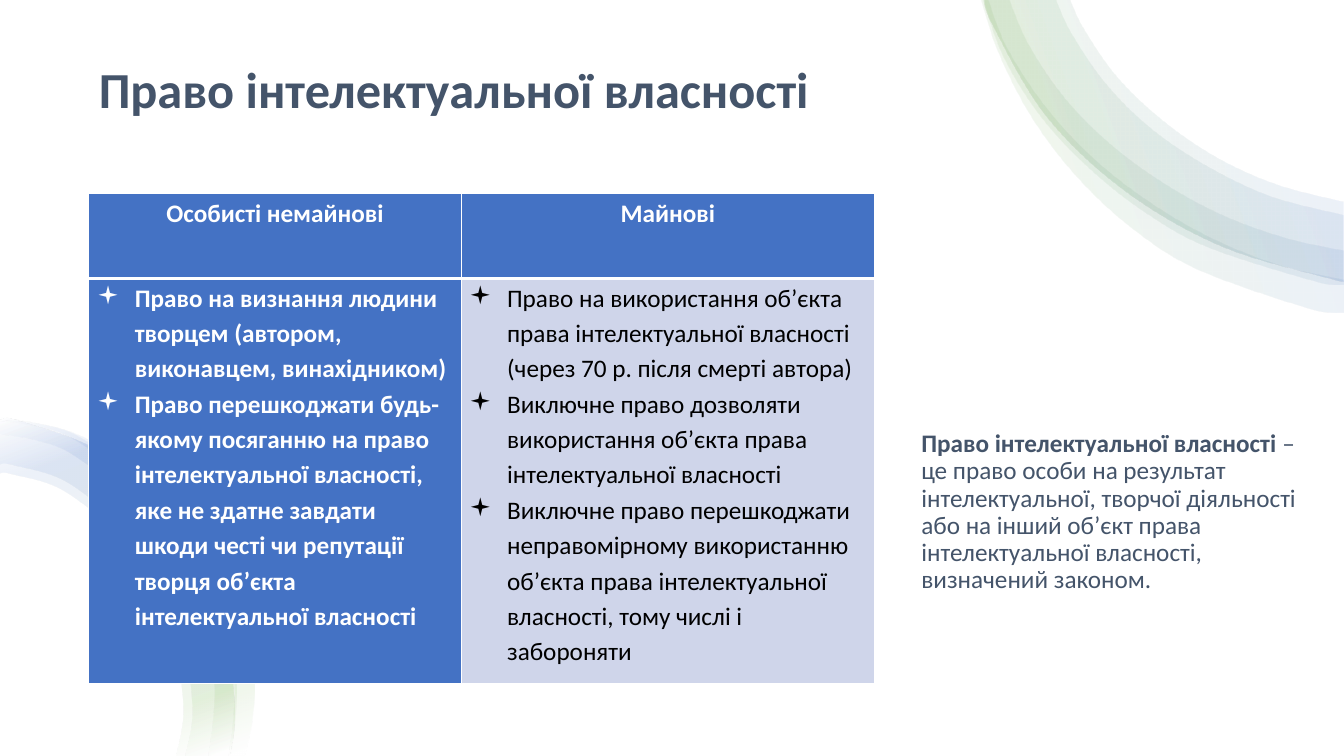
"""Build a slide on intellectual property rights with a table and curved ribbons."""
from dataclasses import dataclass

from lxml import etree
from pptx import Presentation
from pptx.dml.color import RGBColor
from pptx.enum.shapes import MSO_SHAPE
from pptx.enum.text import MSO_ANCHOR, PP_ALIGN
from pptx.oxml import parse_xml
from pptx.oxml.ns import nsdecls, qn
from pptx.util import Cm, Pt

RECT = MSO_SHAPE.RECTANGLE
TOP, MID = MSO_ANCHOR.TOP, MSO_ANCHOR.MIDDLE
LEFT, CENTER = PP_ALIGN.LEFT, PP_ALIGN.CENTER
INCH = 2.54


@dataclass(frozen=True)
class Theme:
    """Colours, fonts and type sizes of the slide."""
    font: str = "Calibri"
    signs: str = "Wingdings"
    head: int = 36
    body: int = 18
    ink: str = "44546A"
    blue: str = "4472C4"
    green: str = "70AD47"
    pale: str = "CFD5EA"
    white: str = "FFFFFF"
    black: str = "000000"


THEME = Theme()

LOW_RIM = [(0, 4.17), (.19, 4.18), (1.02, 4.5), (1.7, 5.15), (2.16, 6.02), (2.32, 6.99), (2.27, 7.5)]
TOP_RIM = [(9.77, 0), (9.85, .25), (10.38, 1.15), (11.16, 1.89), (12.12, 2.44), (13.2, 2.76), (13.33, 2.78)]

LOW_BANDS = [
    (LOW_RIM,
     [(0, 4.7), (.12, 4.71), (.64, 4.88), (1.24, 5.4), (1.66, 6.15), (1.81, 6.99), (1.74, 7.5)]),
    (LOW_RIM,
     [(0, 4.61), (.13, 4.62), (.68, 4.8), (1.3, 5.34), (1.74, 6.11), (1.9, 6.99), (1.83, 7.5)]),
    ([(0, 4.17), (.4, 4.21), (.83, 4.36), (1.56, 4.92), (2.07, 5.7), (2.32, 6.62), (2.33, 7.1), (2.28, 7.5)],
     [(0, 4.31), (.36, 4.37), (.75, 4.53), (1.41, 5.07), (1.86, 5.81), (2.1, 6.65), (2.11, 7.09), (2.06, 7.5)]),
    ([(0, 4.15), (.13, 4.16), (.81, 4.33), (1.61, 4.84), (2.22, 5.62), (2.5, 6.6), (2.5, 7.11), (2.42, 7.5)],
     [(0, 4.18), (.35, 4.23), (.78, 4.39), (1.5, 4.96), (2.02, 5.74), (2.29, 6.62), (2.31, 7.09), (2.26, 7.5)]),
]
TOP_BANDS = [
    ([(9.74, .01), (9.91, .53), (10.24, 1.17), (10.69, 1.76), (11.24, 2.27), (11.88, 2.67), (12.96, 3.05), (13.33, 3.1)],
     [(9.81, .01), (10, .49), (10.39, 1.08), (10.87, 1.59), (11.43, 2.02), (12.04, 2.37), (12.7, 2.63), (13.33, 2.77)]),
    (TOP_RIM,
     [(10.62, 0), (10.75, .28), (11.08, .76), (11.53, 1.19), (12.07, 1.56), (12.67, 1.83), (13.33, 2)]),
    ([(9.76, .01), (9.96, .57), (10.33, 1.16), (10.81, 1.67), (11.37, 2.11), (11.99, 2.45), (13.03, 2.78), (13.33, 2.82)],
     [(10.02, .01), (10.21, .45), (10.57, .98), (11.03, 1.44), (11.57, 1.83), (12.15, 2.14), (12.77, 2.36), (13.33, 2.48)]),
    (TOP_RIM,
     [(10.48, 0), (10.63, .33), (10.98, .84), (11.44, 1.29), (12, 1.66), (12.62, 1.95), (13.33, 2.13)]),
]

HEADS = ["Особисті немайнові", "Майнові"]
RIGHTS = [
    ["Право на визнання людини творцем (автором, виконавцем, винахідником)",
     "Право перешкоджати будь-якому посяганню на право інтелектуальної власності, "
     "яке не здатне завдати шкоди честі чи репутації творця об’єкта інтелектуальної власності"],
    ["Право на використання об’єкта права інтелектуальної власності (через 70 р. після смерті автора)",
     "Виключне право дозволяти використання об’єкта права інтелектуальної власності",
     "Виключне право перешкоджати неправомірному використанню об’єкта права "
     "інтелектуальної власності, тому числі і забороняти"],
]


def put(para, text, size=THEME.body, color=THEME.ink, bold=False,
        align=LEFT, space=0.9, after=0, mark=None):
    """Add a run of formatted text to a paragraph."""
    para.alignment, para.line_spacing, para.space_after = align, space, Pt(after)
    run = para.add_run()
    run.text = text
    font = run.font
    font.name, font.size, font.bold = THEME.font, Pt(size), bold
    font.color.rgb = RGBColor.from_string(color)
    if mark:
        props = para._p.get_or_add_pPr()
        props.set("marL", str(Cm(0.96)))
        props.set("indent", str(-Cm(0.96)))
        etree.SubElement(props, qn("a:buFont")).set("typeface", THEME.signs)
        etree.SubElement(props, qn("a:buChar")).set("char", mark)


def add_box(slide, left, top, width, height, anchor):
    """Add a wrapping text box and return its frame."""
    frame = slide.shapes.add_textbox(Cm(left), Cm(top), Cm(width), Cm(height)).text_frame
    frame.word_wrap, frame.vertical_anchor = True, anchor
    return frame


def add_back(slide, width, height):
    """Cover the slide with a plain white panel."""
    panel = slide.shapes.add_shape(RECT, 0, 0, width, height)
    panel.shadow.inherit = False
    panel.fill.solid()
    panel.fill.fore_color.rgb = RGBColor.from_string(THEME.white)
    panel.line.fill.background()


def bend(lines, spots):
    """Turn the straight steps between the spots into smooth curves."""
    ends = [spots[0], *spots, spots[-1]]
    for line, a, b, c, d in zip(lines, ends, ends[1:], ends[2:], ends[3:]):
        curve = etree.Element(qn("a:cubicBezTo"))
        near = [q + (r - p) / 6 for p, q, r in zip(a, b, c)]
        far = [r - (s - q) / 6 for q, r, s in zip(b, c, d)]
        for x, y in (near, far, c):
            etree.SubElement(curve, qn("a:pt"), x=str(round(x)), y=str(round(y)))
        line.getparent().replace(line, curve)


def add_band(slide, outer, inner, angle):
    """Draw a sheer ribbon between two curved edges."""
    points = [(Cm(x * INCH), Cm(y * INCH)) for x, y in outer + inner[::-1]]
    build = slide.shapes.build_freeform(*points[0], scale=1.0)
    build.add_line_segments(points[1:], close=True)
    band = build.convert_to_shape()
    band.shadow.inherit = False
    band.line.fill.background()
    band.fill.background()
    props = band._element.spPr
    lines = list(props.iter(qn("a:lnTo")))
    spots = [(x - band.left, y - band.top) for x, y in points]
    turn = len(outer)
    bend(lines[:turn - 1], spots[:turn])
    bend(lines[turn:], spots[turn:])
    stops = [(2, THEME.white), (16, THEME.green), (85, THEME.blue), (100, THEME.white)]
    marks = "".join(
        f'<a:gs pos="{pos * 1000}"><a:srgbClr val="{color}"><a:alpha val="10000"/></a:srgbClr></a:gs>'
        for pos, color in stops)
    blend = parse_xml(
        f'<a:gradFill {nsdecls("a")} rotWithShape="1"><a:gsLst>{marks}</a:gsLst>'
        f'<a:lin ang="{angle * 60000}" scaled="0"/></a:gradFill>')
    props.replace(props.find(qn("a:noFill")), blend)


def fill_cell(cell, texts, fill, base=1, **style):
    """Set the fill, white borders and paragraphs of a cell."""
    props = cell._tc.get_or_add_tcPr()
    for side, width in (("L", 1), ("R", 1), ("T", 1), ("B", base)):
        props.append(parse_xml(
            f'<a:ln{side} {nsdecls("a")} w="{Pt(width)}"><a:solidFill>'
            f'<a:srgbClr val="{THEME.white}"/></a:solidFill></a:ln{side}>'))
    cell.fill.solid()
    cell.fill.fore_color.rgb = RGBColor.from_string(fill)
    cell.margin_left = cell.margin_right = Cm(0.2)
    cell.margin_top = cell.margin_bottom = 0
    frame = cell.text_frame
    for spot, text in enumerate(texts):
        para = frame.add_paragraph() if spot else frame.paragraphs[0]
        put(para, text, space=1.15, after=10 if text == texts[-1] else 0, **style)


def add_rights(slide):
    """Add the table of personal and property rights."""
    table = slide.shapes.add_table(2, 2, Cm(2.24), Cm(4.88), Cm(19.8), Cm(12.35)).table
    table.first_row = table.horz_banding = False
    for col, width in zip(table.columns, (9.38, 10.42)):
        col.width = Cm(width)
    for row, height in zip(table.rows, (2.14, 10.21)):
        row.height = Cm(height)
    looks = [(THEME.blue, THEME.white, True), (THEME.pale, THEME.black, False)]
    for col, (fill, color, bold) in enumerate(looks):
        fill_cell(table.cell(0, col), [HEADS[col]], THEME.blue, base=3,
                  color=THEME.white, bold=True, align=CENTER)
        fill_cell(table.cell(1, col), RIGHTS[col], fill, color=color, bold=bold, mark="▪")


def main():
    """Build and save the slide."""
    deck = Presentation()
    deck.slide_width, deck.slide_height = Cm(33.87), Cm(19.05)
    slide = deck.slides.add_slide(deck.slide_layouts[6])
    add_back(slide, deck.slide_width, deck.slide_height)
    title = add_box(slide, 2.24, 1.27, 29.39, 3.61, TOP)
    title.margin_top = Cm(0.37)
    put(title.paragraphs[0], "Право інтелектуальної власності", size=THEME.head, bold=True)
    note = add_box(slide, 22.97, 8.43, 9.98, 8.97, MID).paragraphs[0]
    put(note, "Право інтелектуальної власності", bold=True, after=6)
    put(note, " – це право особи на результат інтелектуальної, творчої діяльності "
        "або на інший об’єкт права інтелектуальної власності, визначений законом.", after=6)
    for bands, angle in ((LOW_BANDS, 250), (TOP_BANDS, 340)):
        for outer, inner in bands:
            add_band(slide, outer, inner, angle)
    add_rights(slide)
    deck.save("out.pptx")


if __name__ == "__main__":
    main()
